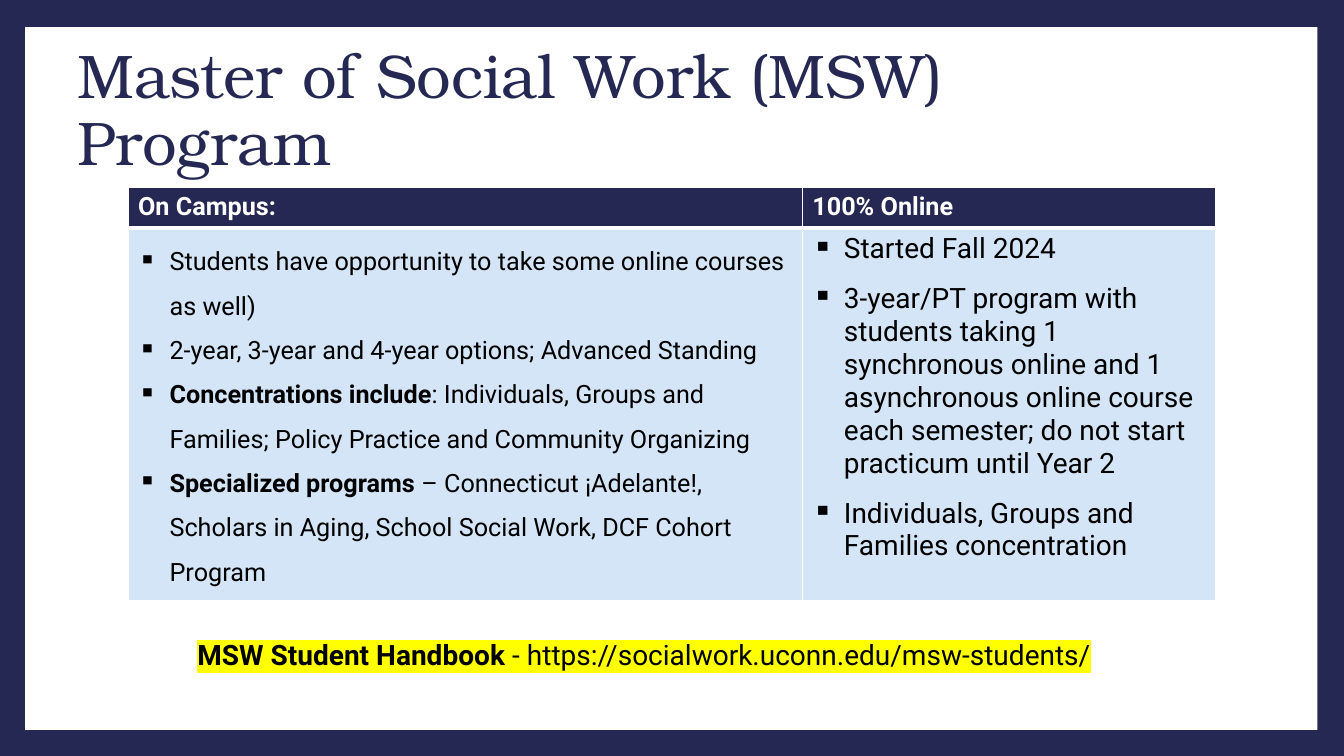
"""Build the Master of Social Work programme slide."""
import dataclasses

import lxml.etree
import pptx
import pptx.dml.color
import pptx.enum.shapes
import pptx.enum.text
import pptx.oxml.ns
import pptx.util

Pt = pptx.util.Pt
qn = pptx.oxml.ns.qn
SubElement = lxml.etree.SubElement


@dataclasses.dataclass(frozen=True)
class Theme:
    navy: str = "242852"
    pale: str = "D4E5F7"
    white: str = "FFFFFF"
    black: str = "000000"
    yellow: str = "FFFF00"
    title_font: str = "TeX Gyre Bonum"
    body_font: str = "Roboto"
    title_size: int = 44
    body_size: int = 18
    large_size: int = 20


theme = Theme()


def rgb(value):
    return pptx.dml.color.RGBColor.from_string(value)


def add_run(paragraph, text, size, color, bold=False, font=theme.body_font, highlight=None):
    run = paragraph.add_run()
    run.text = text
    run.font.size = Pt(size)
    run.font.bold = bold
    run.font.color.rgb = rgb(color)
    if highlight:
        mark = SubElement(run.font._element, qn("a:highlight"))
        SubElement(mark, qn("a:srgbClr"), val=highlight)
    run.font.name = font


presentation = pptx.Presentation()
presentation.slide_width = Pt(960)
presentation.slide_height = Pt(540)
slide = presentation.slides.add_slide(presentation.slide_layouts[6])
slide.background.fill.solid()
slide.background.fill.fore_color.rgb = rgb(theme.navy)

panel = slide.shapes.add_shape(
    pptx.enum.shapes.MSO_SHAPE.RECTANGLE, Pt(18), Pt(19.4), Pt(923), Pt(502))
panel.shadow.inherit = False
panel.fill.solid()
panel.fill.fore_color.rgb = rgb(theme.white)
panel.line.fill.background()

title = slide.shapes.add_textbox(Pt(48.24), Pt(26.64), Pt(820), Pt(106.56))
title.text_frame.word_wrap = True
title.text_frame.vertical_anchor = pptx.enum.text.MSO_ANCHOR.MIDDLE
paragraph = title.text_frame.paragraphs[0]
paragraph.line_spacing = 0.9
add_run(paragraph, "Master of Social Work (MSW) Program", theme.title_size, theme.navy,
        font=theme.title_font)

programs = [
    {
        "heading": "On Campus:", "width": 481.68, "size": theme.body_size,
        "line_spacing": 1.5, "space_after": 0,
        "items": [
            [("Students have opportunity to take some online courses as well)", False)],
            [("2-year, 3-year and 4-year options; Advanced Standing", False)],
            [("Concentrations include", True),
             (": Individuals, Groups and Families; Policy Practice and Community Organizing", False)],
            [("Specialized programs ", True),
             ("– Connecticut ¡Adelante!, Scholars in Aging, School Social Work, "
              "DCF Cohort Program", False)],
        ],
    },
    {
        "heading": "100% Online", "width": 295.2, "size": theme.large_size,
        "line_spacing": 1.0, "space_after": 12,
        "items": [
            [("Started Fall 2024", False)],
            [("3-year/PT program with students taking 1 synchronous online and 1 asynchronous "
              "online course each semester; do not start practicum until Year 2", False)],
            [("Individuals, Groups and Families concentration", False)],
        ],
    },
]

table = slide.shapes.add_table(2, 2, Pt(91.44), Pt(133.92), Pt(776.88), Pt(279.36)).table
table.rows[0].height = Pt(28.08)
table.rows[1].height = Pt(251.28)

for column, program in enumerate(programs):
    table.columns[column].width = Pt(program["width"])
    heading_cell, body_cell = table.cell(0, column), table.cell(1, column)

    for cell, color, thick_edge in ((heading_cell, theme.navy, "lnB"),
                                    (body_cell, theme.pale, "lnT")):
        properties = cell._tc.get_or_add_tcPr()
        for edge in ("lnL", "lnR", "lnT", "lnB"):
            width = Pt(3 if edge == thick_edge else 1)
            border = SubElement(properties, qn("a:" + edge), w=str(width))
            border_fill = SubElement(border, qn("a:solidFill"))
            SubElement(border_fill, qn("a:srgbClr"), val=theme.white)
        cell.fill.solid()
        cell.fill.fore_color.rgb = rgb(color)

    add_run(heading_cell.text_frame.paragraphs[0], program["heading"],
            theme.body_size, theme.white, bold=True)

    for index, item in enumerate(program["items"]):
        frame = body_cell.text_frame
        paragraph = frame.add_paragraph() if index else frame.paragraphs[0]
        properties = paragraph._p.get_or_add_pPr()
        properties.set("marL", str(Pt(22.5)))
        properties.set("indent", str(-Pt(22.5)))
        SubElement(properties, qn("a:buChar"), char="▪")
        paragraph.line_spacing = program["line_spacing"]
        paragraph.space_after = Pt(program["space_after"])
        for text, bold in item:
            add_run(paragraph, text, program["size"], theme.black, bold)

handbook = slide.shapes.add_textbox(Pt(133.92), Pt(452.16), Pt(691.92), Pt(31.68))
handbook.text_frame.word_wrap = True
for text, bold in (("MSW Student Handbook ", True),
                   ("- https://socialwork.uconn.edu/msw-students/", False)):
    add_run(handbook.text_frame.paragraphs[0], text, theme.large_size, theme.black, bold,
            highlight=theme.yellow)

presentation.save("out.pptx")
